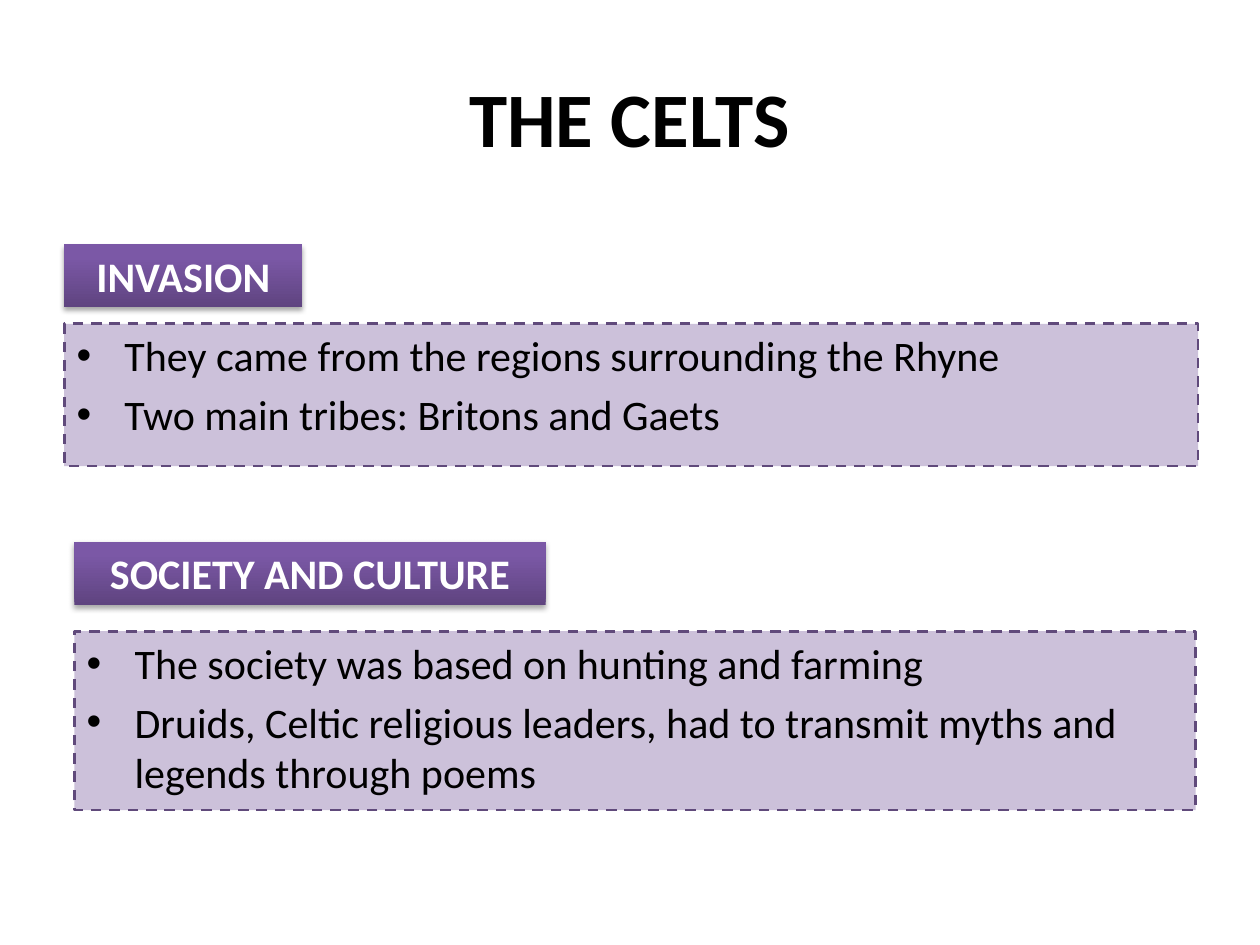
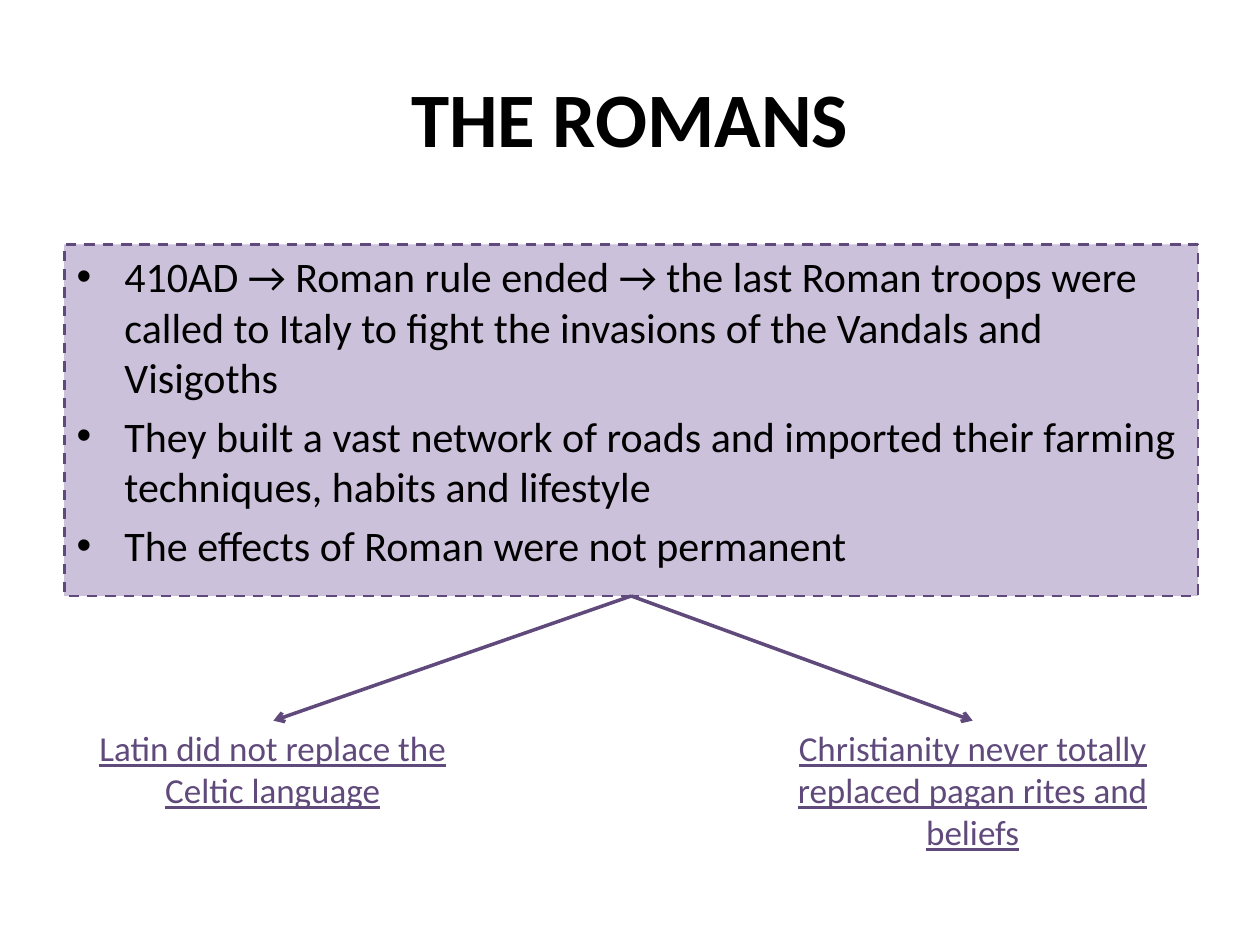
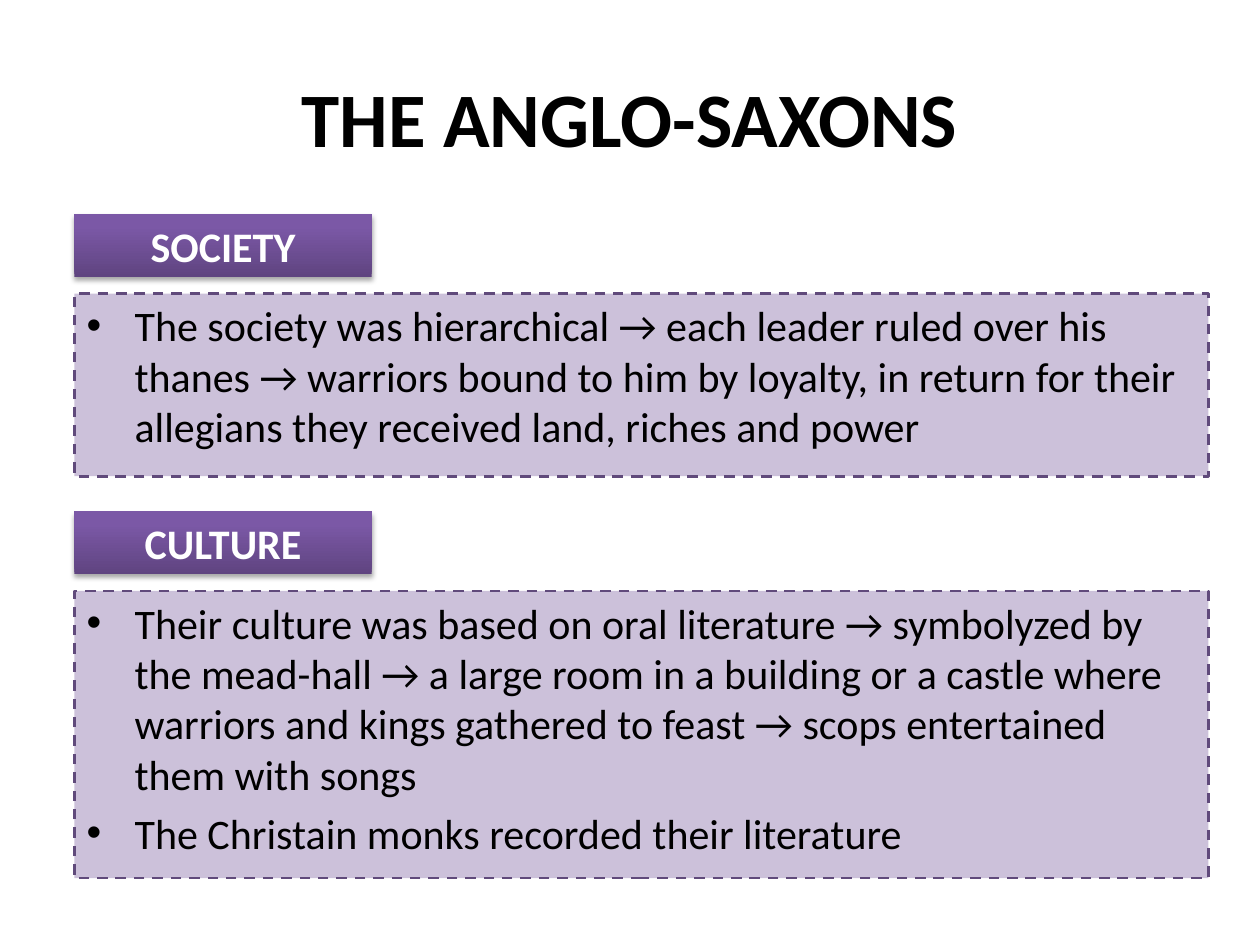
from copy import deepcopy

from lxml import etree
from pptx import Presentation
from pptx.dml.color import RGBColor
from pptx.enum.dml import MSO_LINE
from pptx.enum.shapes import MSO_CONNECTOR, MSO_SHAPE
from pptx.enum.text import MSO_ANCHOR, PP_ALIGN
from pptx.oxml.ns import qn
from pptx.util import Emu, Pt

RECTANGLE = MSO_SHAPE.RECTANGLE
STRAIGHT = MSO_CONNECTOR.STRAIGHT
DASH = MSO_LINE.DASH
TOP, MIDDLE = MSO_ANCHOR.TOP, MSO_ANCHOR.MIDDLE
LEFT, CENTER = PP_ALIGN.LEFT, PP_ALIGN.CENTER

PX = 9144  # 100 px to the inch
FONT = "Calibri"
BLACK, WHITE = "000000", "FFFFFF"
PURPLE, LILAC = "604A7B", "CCC1DA"
LABEL_STOPS = [(0, "5F4480"), (0.8, "7B58A6"), (1, "7C57A8")]
LABEL_HEIGHT = 50
BULLET_INDENT = 38

# Each slide: title, labels (text, left, top, width),
# panels (left, top, width, height, bullets)
SLIDES = [
    ("THE CELTS",
     [("INVASION", 51, 194, 189),
      ("SOCIETY AND CULTURE", 59, 430, 374)],
     [(51, 257, 900, 113,
       ["They came from the regions surrounding the Rhyne",
        "Two main tribes: Britons and Gaets"]),
      (59, 501, 890, 142,
       ["The society was based on hunting and farming",
        "Druids, Celtic religious leaders, had to transmit myths and legends through poems"])]),
    ("THE ROMANS",
     [],
     [(51, 194, 900, 279,
       ["410AD → Roman rule ended → the last Roman troops were called to Italy "
        "to fight the invasions of the Vandals and Visigoths",
        "They built a vast network of roads and imported their farming techniques, "
        "habits and lifestyle",
        "The effects of Roman were not permanent"])]),
    ("THE ANGLO-SAXONS",
     [("SOCIETY", 59, 170, 236),
      ("CULTURE", 59, 406, 236)],
     [(59, 233, 900, 145,
       ["The society was hierarchical → each leader ruled over his thanes → warriors "
        "bound to him by loyalty, in return for their allegians they received land, "
        "riches and power"]),
      (59, 469, 900, 228,
       ["Their culture was based on oral literature → symbolyzed by the mead-hall → "
        "a large room in a building or a castle where warriors and kings gathered to "
        "feast → scops entertained them with songs",
        "The Christain monks recorded their literature"])]),
]

# Effects of Roman rule: text, left, width, height, arrow tip
EFFECTS = [
    ("Latin did not replace the Celtic language", 51, 331, 77, 217),
    ("Christianity never totally replaced pagan rites and beliefs", 587, 370, 111, 772),
]
EFFECTS_TOP = 572
ARROW_START = (501, 473)


def rgb(color):
    return RGBColor.from_string(color)


def style(paragraph, size, color, align=CENTER, bold=False):
    paragraph.alignment = align
    paragraph.font.name = FONT
    paragraph.font.size = Pt(size)
    paragraph.font.bold = bold
    paragraph.font.color.rgb = rgb(color)


presentation = Presentation()
presentation.slide_width = Emu(1000 * PX)
presentation.slide_height = Emu(750 * PX)
title_only = presentation.slide_layouts[5]

for title_text, labels, panels in SLIDES:
    slide = presentation.slides.add_slide(title_only)

    # Title
    title = slide.shapes.title
    title.left, title.top, title.width, title.height = (
        Emu(length * PX) for length in (50, 30, 900, 125))
    title.text_frame.text = title_text
    title.text_frame.vertical_anchor = MIDDLE
    style(title.text_frame.paragraphs[0], 44, BLACK, bold=True)

    # Dashed panels with bullets
    for *box, bullets in panels:
        panel = slide.shapes.add_shape(RECTANGLE, *(Emu(length * PX) for length in box))
        panel.shadow.inherit = False
        panel.fill.solid()
        panel.fill.fore_color.rgb = rgb(LILAC)
        panel.line.color.rgb = rgb(PURPLE)
        panel.line.width = Pt(1.5)
        panel.line.dash_style = DASH
        frame = panel.text_frame
        frame.vertical_anchor = TOP
        for index, bullet in enumerate(bullets):
            paragraph = frame.add_paragraph() if index else frame.paragraphs[0]
            paragraph.text = bullet
            properties = paragraph._p.get_or_add_pPr()
            properties.set("marL", str(BULLET_INDENT * PX))
            properties.set("indent", str(-BULLET_INDENT * PX))
            etree.SubElement(properties, qn("a:buFont"), typeface="Arial")
            etree.SubElement(properties, qn("a:buChar"), char="•")
            style(paragraph, 24, BLACK, LEFT)
            if index:
                paragraph.space_before = Pt(4.8)

    # Gradient labels with a soft shadow
    for text, left, top, width in labels:
        label = slide.shapes.add_shape(
            RECTANGLE, *(Emu(length * PX) for length in (left, top, width, LABEL_HEIGHT)))
        label.fill.gradient()
        label.fill.gradient_angle = 90
        shape_properties = label._element.spPr
        stop_list = shape_properties.find(".//" + qn("a:gsLst"))
        stop_list.append(deepcopy(stop_list[0]))
        for stop, (position, color) in zip(label.fill.gradient_stops, LABEL_STOPS):
            stop.position = position
            stop.color.rgb = rgb(color)
        label.line.fill.background()
        label.shadow.inherit = False
        shadow = etree.SubElement(
            shape_properties.find(qn("a:effectLst")), qn("a:outerShdw"),
            blurRad=str(Pt(3.1)), dist=str(Pt(1.8)), dir="5400000", rotWithShape="0")
        shadow_color = etree.SubElement(shadow, qn("a:srgbClr"), val=BLACK)
        etree.SubElement(shadow_color, qn("a:alpha"), val="35000")
        label.text_frame.text = text
        label.text_frame.vertical_anchor = TOP
        style(label.text_frame.paragraphs[0], 24, WHITE, bold=True)

# Arrows from the Roman panel to its two effects
slide = presentation.slides[1]
for text, left, width, height, arrow_tip in EFFECTS:
    effect = slide.shapes.add_textbox(
        *(Emu(length * PX) for length in (left, EFFECTS_TOP, width, height)))
    effect.text_frame.word_wrap = True
    effect.text_frame.text = text
    paragraph = effect.text_frame.paragraphs[0]
    style(paragraph, 20, PURPLE)
    paragraph.font.underline = True

    arrow = slide.shapes.add_connector(
        STRAIGHT, *(Emu(length * PX) for length in (*ARROW_START, arrow_tip, EFFECTS_TOP)))
    arrow.line.color.rgb = rgb(PURPLE)
    arrow.line.width = Pt(2)
    etree.SubElement(arrow.line._get_or_add_ln(), qn("a:tailEnd"), type="arrow")
    etree.SubElement(arrow._element.spPr, qn("a:effectLst"))

presentation.save("out.pptx")
